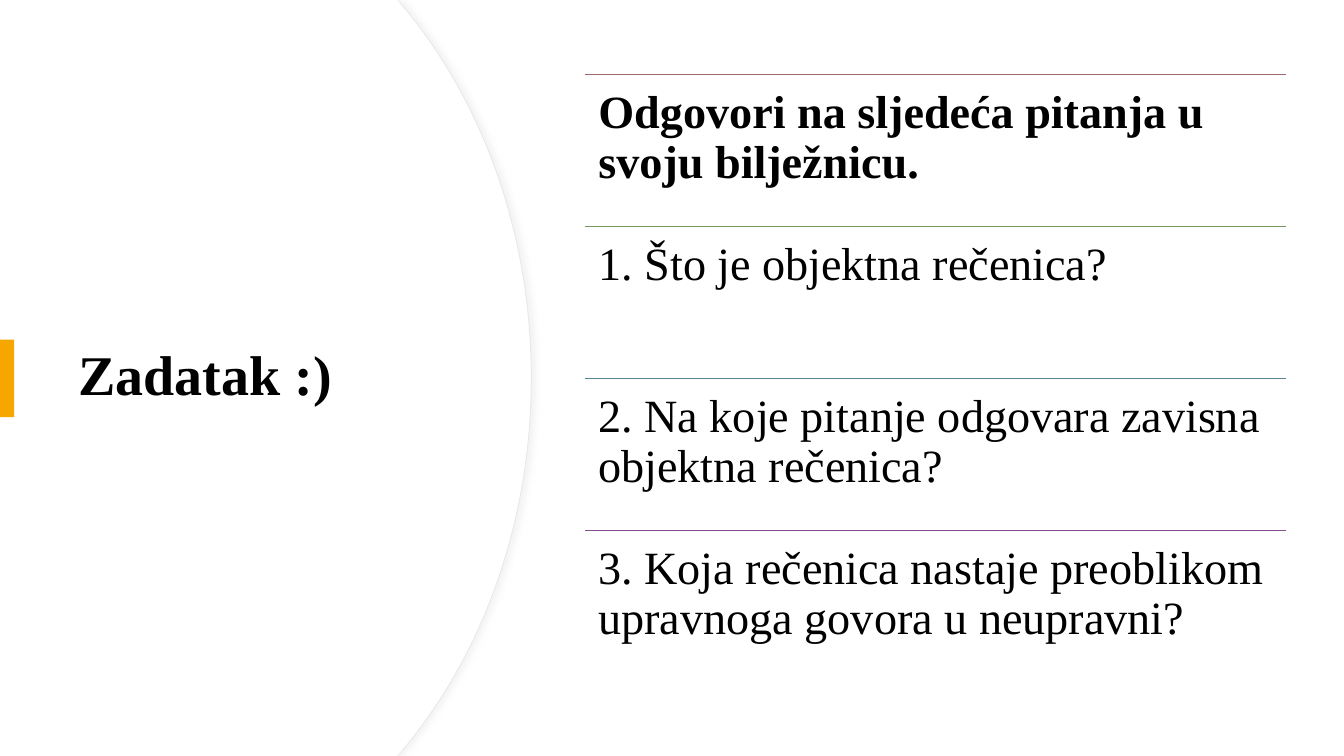
from lxml.etree import SubElement
from pptx import Presentation
from pptx.dml.color import RGBColor
from pptx.enum.shapes import MSO_CONNECTOR, MSO_SHAPE
from pptx.enum.text import MSO_ANCHOR
from pptx.oxml.ns import qn
from pptx.util import Cm, Pt

HUES = {
    "white": "FFFFFF", "black": "000000", "edge": "E9E9E9", "shade": "D9D9D9",
    "gold": "F5A700", "rose": "9C6A6A", "green": "769860", "blue": "578592",
    "plum": "824F8C",
}
WIDE, HIGH = 33.87, 19.05
ROWS = [
    ("Odgovori na sljedeća pitanja u svoju bilježnicu.", "rose", True),
    ("1. Što je objektna rečenica?", "green", False),
    ("2. Na koje pitanje odgovara zavisna objektna rečenica?", "blue", False),
    ("3. Koja rečenica nastaje preoblikom upravnoga govora u neupravni?", "plum", False),
]


def hue(name):
    return RGBColor.from_string(HUES[name])


def paint(shape, fill):
    shape.shadow.inherit = False
    shape.fill.solid()
    shape.fill.fore_color.rgb = hue(fill)
    shape.line.fill.background()


def block(home, x, y, w, h, fill):
    shape = home.add_shape(MSO_SHAPE.RECTANGLE, Cm(x), Cm(y), Cm(w), Cm(h))
    paint(shape, fill)


def write(home, text, x, y, w, h, size, bold=False, side=0.25, head=0.13,
          anchor=MSO_ANCHOR.TOP):
    frame = home.add_textbox(Cm(x), Cm(y), Cm(w), Cm(h)).text_frame
    frame.word_wrap = True
    frame.vertical_anchor = anchor
    frame.margin_left = frame.margin_right = Cm(side)
    frame.margin_top = frame.margin_bottom = Cm(head)
    para = frame.paragraphs[0]
    para.line_spacing = 0.9
    run = para.add_run()
    run.text = text
    run.font.name = "Times New Roman"
    run.font.size = Pt(size)
    run.font.bold = bold
    run.font.color.rgb = hue("black")


def rule(home, x, y, w, color):
    line = home.add_connector(MSO_CONNECTOR.STRAIGHT, Cm(x), Cm(y), Cm(x + w), Cm(y))
    line.line.color.rgb = hue(color)
    line.line.width = Pt(1)
    SubElement(line._element.spPr, qn("a:effectLst"))


def bend(shape, first, count):
    """Turn runs of three line segments into cubic curves."""
    steps = list(shape._element.iter(qn("a:lnTo")))
    for i in range(first, first + 3 * count, 3):
        trio = steps[i:i + 3]
        cubic = SubElement(trio[0].getparent(), qn("a:cubicBezTo"))
        trio[0].addprevious(cubic)
        for step in trio:
            cubic.append(step[0])
            step.getparent().remove(step)


def panel(home, shift=0.0):
    # The lower half mirrors the upper half
    arc = [(10.17, 0.2), (12.15, 2.59), (13.37, 5.89), (13.37, HIGH / 2)]
    top = [(10.01, 0)] + [(x + shift, y) for x, y in arc]
    low = [(x, HIGH - y) for x, y in reversed(top[:-1])]
    pen = home.build_freeform(0, 0)
    pen.add_line_segments([(Cm(x), Cm(y)) for x, y in top + low + [(0, HIGH)]])
    shape = pen.convert_to_shape()
    bend(shape, 2, 2)
    paint(shape, "white")
    return shape


def edge(shape):
    shape.line.color.rgb = hue("edge")
    shape.line.width = Pt(0.75)
    glow = SubElement(shape._element.spPr.find(qn("a:effectLst")), qn("a:outerShdw"),
                      blurRad=str(Pt(4)), dist=str(Pt(3)), dir="0", algn="l", rotWithShape="0")
    tint = SubElement(glow, qn("a:srgbClr"), val=HUES["shade"])
    SubElement(tint, qn("a:alpha"), val="30000")


def main():
    deck = Presentation()
    deck.slide_width, deck.slide_height = Cm(WIDE), Cm(HIGH)
    shapes = deck.slides.add_slide(deck.slide_layouts[6]).shapes

    # White ground
    block(shapes, 0, 0, WIDE, HIGH, "white")

    # Curved panel: outlined back, plain front
    edge(panel(shapes, 0.02))
    panel(shapes)

    # Title with its gold tab
    write(shapes, "Zadatak :)", 1.73, 3.23, 10, 12.57, 40, bold=True, anchor=MSO_ANCHOR.MIDDLE)
    block(shapes, 0, 8.56, 0.36, 1.95, "gold")

    # Ruled list of questions
    group = shapes.add_group_shape().shapes
    left, top, width, step = 14.73, 1.88, 17.68, 3.83
    for i, (text, color, bold) in enumerate(ROWS):
        y = top + i * step
        rule(group, left, y, width, color)
        write(group, text, left, y, width, step, 33, bold=bold, side=0.35, head=0.35)

    deck.save("out.pptx")


if __name__ == "__main__":
    main()
